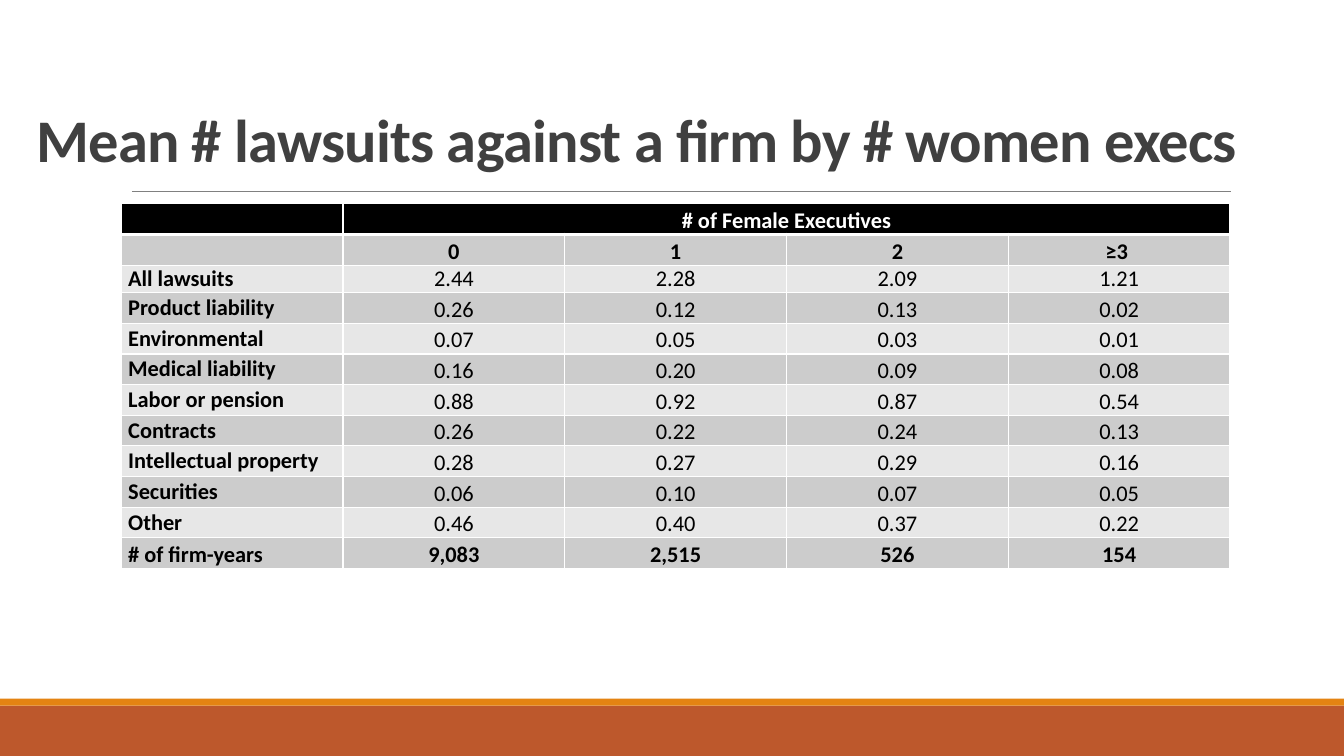
import pptx
import pptx.dml.color
import pptx.enum.shapes
import pptx.enum.text
import pptx.oxml.ns
import pptx.util
from lxml import etree

Pt = pptx.util.Pt
ANCHOR = pptx.enum.text.MSO_ANCHOR
ALIGN = pptx.enum.text.PP_ALIGN
FONT = "Calibri"
COLORS = {
    "footer": "BD582C", "accent": "E48312", "rule": "808080", "title": "404040",
    "header": "000000", "dark_band": "CCCCCC", "light_band": "E7E7E7",
    "text": "000000", "white": "FFFFFF",
}
TITLE = "Mean # lawsuits against a firm by # women execs"
ROWS = [
    ["", "# of Female Executives", "", "", ""],
    ["", "0", "1", "2", "≥3 "],
    ["All lawsuits", "2.44", "2.28", "2.09", "1.21"],
    ["Product liability", "0.26", "0.12", "0.13", "0.02"],
    ["Environmental", "0.07", "0.05", "0.03", "0.01"],
    ["Medical liability", "0.16", "0.20", "0.09", "0.08"],
    ["Labor or pension", "0.88", "0.92", "0.87", "0.54"],
    ["Contracts", "0.26", "0.22", "0.24", "0.13"],
    ["Intellectual property", "0.28", "0.27", "0.29", "0.16"],
    ["Securities", "0.06", "0.10", "0.07", "0.05"],
    ["Other", "0.46", "0.40", "0.37", "0.22"],
    ["# of firm-years", "9,083", "2,515", "526", "154"],
]
LAST_ROW = len(ROWS) - 1
ROW_HEIGHT = 21.9
TIGHT_ROW, TIGHT_HEIGHT = 2, 19.5


def color(name):
    return pptx.dml.color.RGBColor.from_string(COLORS[name])


def format_runs(paragraph, size, color_name, bold):
    for run in paragraph.runs:
        run.font.name = FONT
        run.font.size = Pt(size)
        run.font.bold = bold
        run.font.color.rgb = color(color_name)


def add_footer(slide, left, top, width, height):
    accent_height = 5
    bands = [("footer", top + accent_height, height - accent_height),
             ("accent", top, accent_height)]
    for name, band_top, band_height in bands:
        shape = slide.shapes.add_shape(
            pptx.enum.shapes.MSO_SHAPE.RECTANGLE,
            Pt(left), Pt(band_top), Pt(width), Pt(band_height))
        shape.shadow.inherit = False
        shape.fill.solid()
        shape.fill.fore_color.rgb = color(name)
        shape.line.fill.background()


def add_rule(slide, left, top, width):
    rule = slide.shapes.add_connector(
        pptx.enum.shapes.MSO_CONNECTOR.STRAIGHT,
        Pt(left), Pt(top), Pt(left + width), Pt(top))
    rule.line.color.rgb = color("rule")
    rule.line.width = Pt(0.5)
    etree.SubElement(rule._element.spPr, pptx.oxml.ns.qn("a:effectLst"))


def set_title(slide, left, top, width, height):
    title = slide.shapes.title
    title.left, title.top, title.width, title.height = map(Pt, (left, top, width, height))
    frame = title.text_frame
    frame.text = TITLE
    frame.word_wrap = True
    frame.auto_size = pptx.enum.text.MSO_AUTO_SIZE.NONE
    frame.vertical_anchor = ANCHOR.BOTTOM
    paragraph = frame.paragraphs[0]
    paragraph.alignment = ALIGN.LEFT
    paragraph.line_spacing = 0.85
    format_runs(paragraph, 43.2, "title", True)
    paragraph.runs[0].font._element.set("spc", "-50")


def set_borders(cell, row):
    properties = cell._tc.get_or_add_tcPr()
    widths = {"lnL": 1, "lnR": 1, "lnT": 3 if row == 1 else 1, "lnB": 3 if row == 0 else 1}
    for index, (side, width) in enumerate(widths.items()):
        line = etree.Element(pptx.oxml.ns.qn("a:" + side), w=str(Pt(width)))
        fill = etree.SubElement(line, pptx.oxml.ns.qn("a:solidFill"))
        etree.SubElement(fill, pptx.oxml.ns.qn("a:srgbClr"), val=COLORS["white"])
        properties.insert(index, line)


def format_cell(cell, row, column):
    is_label = column == 0
    cell.margin_left = cell.margin_right = Pt(5)
    cell.margin_top = cell.margin_bottom = 0
    cell.vertical_anchor = ANCHOR.MIDDLE if is_label and row < LAST_ROW else ANCHOR.BOTTOM
    cell.fill.solid()
    band = "header" if row == 0 else "dark_band" if row % 2 else "light_band"
    cell.fill.fore_color.rgb = color(band)
    paragraph = cell.text_frame.paragraphs[0]
    label_alignment = ALIGN.JUSTIFY if row < LAST_ROW else ALIGN.LEFT
    paragraph.alignment = label_alignment if is_label else ALIGN.CENTER
    bold = is_label or row in (0, 1, LAST_ROW)
    format_runs(paragraph, 16, "white" if row == 0 else "text", bold)
    set_borders(cell, row)


def add_lawsuit_table(slide, left, top, width, height):
    table = slide.shapes.add_table(
        len(ROWS), len(ROWS[0]), Pt(left), Pt(top), Pt(width), Pt(height)).table
    for column in table.columns:
        column.width = Pt(width / len(ROWS[0]))
    table.cell(0, 1).merge(table.cell(0, 4))
    for row, values in enumerate(ROWS):
        table.rows[row].height = Pt(TIGHT_HEIGHT if row == TIGHT_ROW else ROW_HEIGHT)
        for column, value in enumerate(values):
            cell = table.cell(row, column)
            if value:
                cell.text_frame.text = value
            format_cell(cell, row, column)


def main():
    presentation = pptx.Presentation()
    presentation.slide_width = Pt(960)
    presentation.slide_height = Pt(540)
    slide = presentation.slides.add_slide(presentation.slide_layouts[5])
    add_footer(slide, 0, 499, 960, 41)
    add_rule(slide, 94.3, 136.8, 784.8)
    set_title(slide, 18.7, 23.8, 899.3, 104.4)
    add_lawsuit_table(slide, 86.6, 145.5, 792, LAST_ROW * ROW_HEIGHT + TIGHT_HEIGHT)
    presentation.save("out.pptx")


if __name__ == "__main__":
    main()
